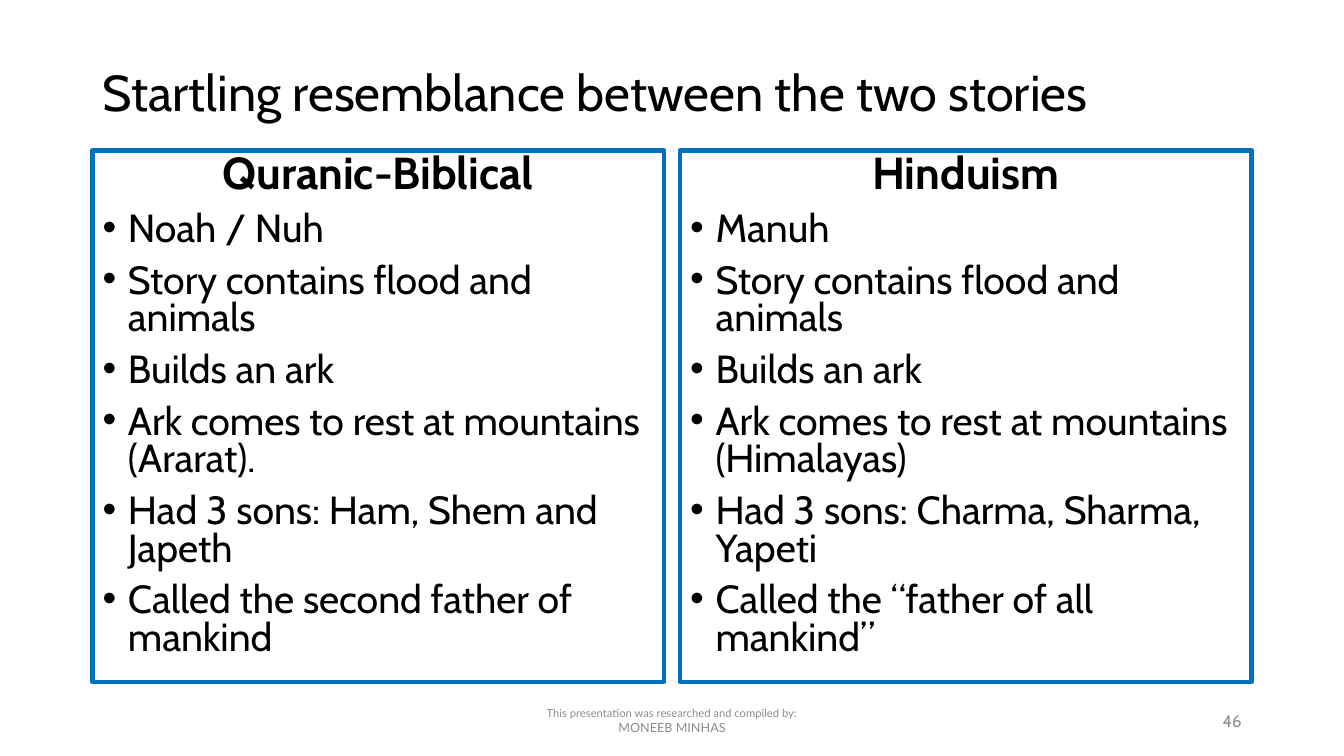
from collections import namedtuple
from dataclasses import dataclass

from lxml.etree import SubElement
from pptx import Presentation
from pptx.dml.color import RGBColor as Color
from pptx.enum.text import MSO_ANCHOR as Anchor, MSO_AUTO_SIZE as AutoSize, PP_ALIGN as Align
from pptx.oxml.ns import qn
from pptx.util import Cm, Pt

Box = namedtuple("Box", "left top width height")


@dataclass(frozen=True)
class Theme:
    """Colours, fonts and type sizes of the slide."""
    text: Color = Color(0x00, 0x00, 0x00)
    border: Color = Color(0x00, 0x70, 0xC0)
    muted: Color = Color(0x8C, 0x8C, 0x8C)
    font: str = "Cabin"
    footer_font: str = "Lato"
    title: Pt = Pt(36)
    heading: Pt = Pt(32)
    item: Pt = Pt(28)
    credit: Pt = Pt(8)
    author: Pt = Pt(9)
    number: Pt = Pt(12)
    border_width: Pt = Pt(3)


THEME = Theme()
TITLE = "Startling resemblance between the two stories"
STORIES = {
    "Quranic-Biblical": [
        "Noah / Nuh",
        "Story contains flood and animals",
        "Builds an ark",
        "Ark comes to rest at mountains (Ararat).",
        "Had 3 sons: Ham, Shem and Japeth",
        "Called the second father of mankind",
    ],
    "Hinduism": [
        "Manuh",
        "Story contains flood and animals",
        "Builds an ark",
        "Ark comes to rest at mountains (Himalayas)",
        "Had 3 sons: Charma, Sharma, Yapeti",
        "Called the “father of all mankind”",
    ],
}


def apply(target, values):
    """Set each attribute named in a dict of format values."""
    for name, value in values.items():
        setattr(target, name, value)


def place(shape, box, anchor):
    """Move a shape into a box and fix how its text sits."""
    apply(shape, box._asdict())
    apply(shape.text_frame, {"word_wrap": True, "auto_size": AutoSize.NONE,
                             "vertical_anchor": anchor})


def add_run(paragraph, text, size, color=THEME.text, font=THEME.font, bold=False):
    """Append a formatted run to a paragraph."""
    run = paragraph.add_run()
    run.text = text
    apply(run.font, {"name": font, "size": size, "bold": bold})
    run.font.color.rgb = color


def set_bullet(paragraph, bullet=None):
    """Give a paragraph a hanging bullet, or remove its bullet and indent."""
    properties = paragraph._p.get_or_add_pPr()
    indent = Cm(0.64) if bullet else 0
    properties.set("marL", str(indent))
    properties.set("indent", str(-indent))
    if bullet:
        SubElement(properties, qn("a:buFont"), typeface="Arial")
        SubElement(properties, qn("a:buChar"), char=bullet)
    else:
        SubElement(properties, qn("a:buNone"))


def fill_title(shape, box):
    """Write the slide title."""
    place(shape, box, Anchor.MIDDLE)
    paragraph = shape.text_frame.paragraphs[0]
    apply(paragraph, {"alignment": Align.LEFT, "line_spacing": 0.9})
    add_run(paragraph, TITLE, THEME.title)


def fill_story(shape, box, heading, items):
    """Write one bordered column with a heading and its bullets."""
    place(shape, box, Anchor.TOP)
    shape.line.color.rgb = THEME.border
    shape.line.width = THEME.border_width
    frame = shape.text_frame
    for index, text in enumerate([heading, *items]):
        is_heading = index == 0
        paragraph = frame.paragraphs[0] if is_heading else frame.add_paragraph()
        apply(paragraph, {"alignment": Align.CENTER if is_heading else Align.LEFT,
                          "line_spacing": 0.8, "space_before": Pt(10)})
        set_bullet(paragraph, None if is_heading else "•")
        add_run(paragraph, text, THEME.heading if is_heading else THEME.item, bold=is_heading)


def add_footer(slide, box):
    """Add the centred credit and the page number at the right end of a box."""
    credit_width, number_width = Cm(11.43), Cm(7.62)
    credit_box = box._replace(left=box.left + (box.width - credit_width) // 2, width=credit_width)
    number_box = box._replace(left=box.left + box.width - number_width, width=number_width)

    credit = slide.shapes.add_textbox(*credit_box)
    place(credit, credit_box, Anchor.MIDDLE)
    paragraph = credit.text_frame.paragraphs[0]
    paragraph.alignment = Align.CENTER
    add_run(paragraph, "This presentation was researched and compiled by:",
            THEME.credit, THEME.muted, THEME.footer_font)
    paragraph.add_line_break()
    add_run(paragraph, "MONEEB MINHAS", THEME.author, THEME.muted, THEME.footer_font)

    number = slide.shapes.add_textbox(*number_box)
    place(number, number_box, Anchor.MIDDLE)
    paragraph = number.text_frame.paragraphs[0]
    paragraph.alignment = Align.RIGHT
    add_run(paragraph, "46", THEME.number, THEME.muted)


def build_comparison(presentation, box):
    """Build the two-column comparison slide inside a box."""
    slide = presentation.slides.add_slide(presentation.slide_layouts[3])
    title, *columns = slide.placeholders
    title_height, column_height, gap = Cm(2.77), Cm(13.39), Cm(0.41)
    footer_height = Cm(1.02)
    column_width = (box.width - gap) // 2
    fill_title(title, box._replace(height=title_height))
    for index, (shape, story) in enumerate(zip(columns, STORIES.items())):
        column_box = Box(box.left + index * (column_width + gap), box.top + title_height,
                         column_width, column_height)
        fill_story(shape, column_box, *story)
    add_footer(slide, box._replace(top=box.top + box.height - footer_height, height=footer_height))


def main():
    """Create the presentation and save it."""
    presentation = Presentation()
    apply(presentation, {"slide_width": Cm(33.87), "slide_height": Cm(19.05)})
    build_comparison(presentation, Box(Cm(2.33), Cm(1.02), Cm(29.21), Cm(17.65)))
    presentation.save("out.pptx")


if __name__ == "__main__":
    main()
